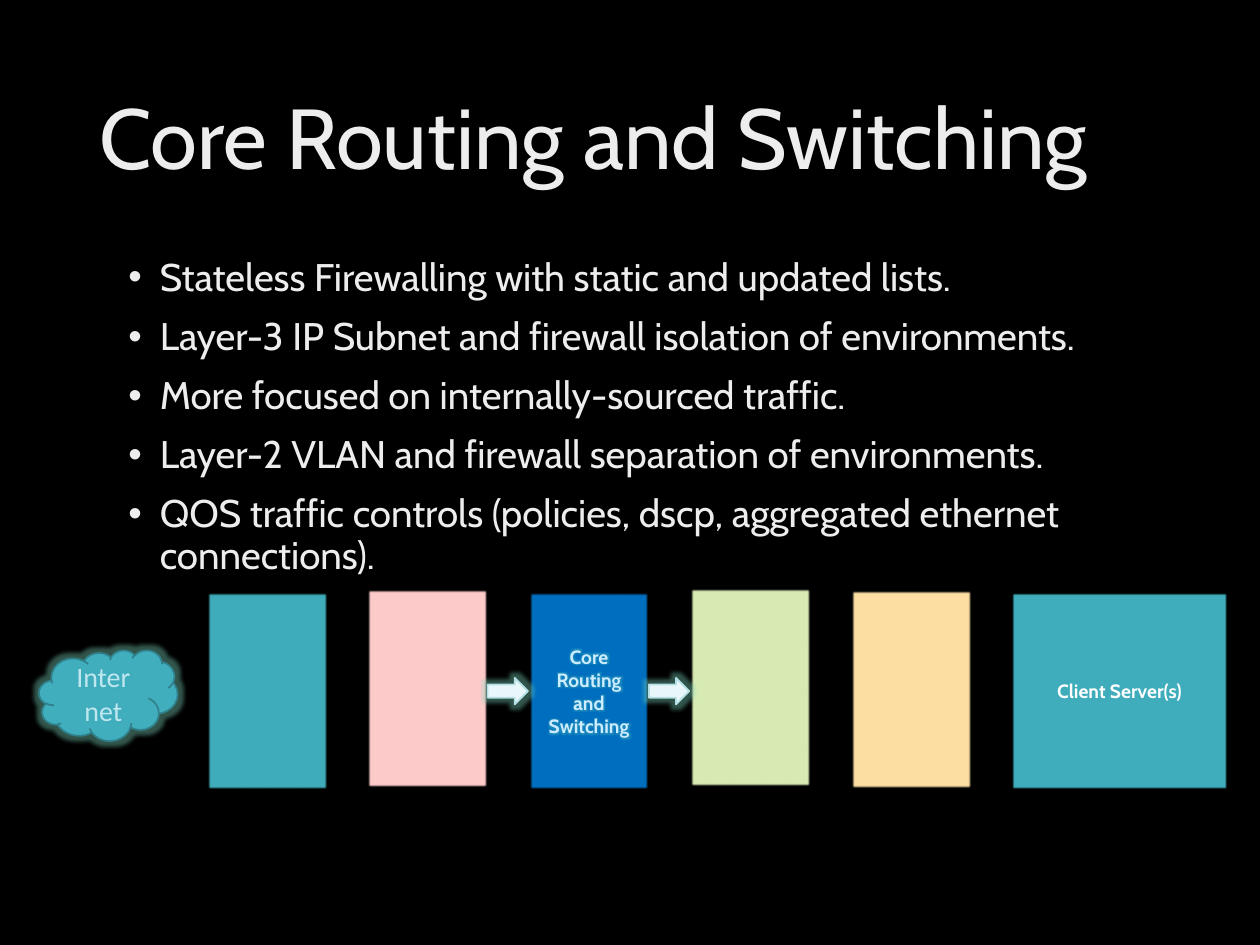
"""Build the Core Routing and Switching slide."""
from lxml import etree
from pptx import Presentation
from pptx.dml.color import RGBColor
from pptx.enum.shapes import MSO_SHAPE
from pptx.enum.text import MSO_ANCHOR, MSO_AUTO_SIZE, PP_ALIGN
from pptx.oxml import parse_xml
from pptx.oxml.ns import qn
from pptx.util import Pt

PX = 9144
RECTANGLE, CLOUD, ARROW = MSO_SHAPE.RECTANGLE, MSO_SHAPE.CLOUD, MSO_SHAPE.RIGHT_ARROW
MIDDLE, TOP = MSO_ANCHOR.MIDDLE, MSO_ANCHOR.TOP
LEFT, CENTER = PP_ALIGN.LEFT, PP_ALIGN.CENTER
NAMESPACE = "http://schemas.openxmlformats.org/drawingml/2006/main"
SOFT_EDGE = f'<a:effectLst xmlns:a="{NAMESPACE}"><a:softEdge rad="12700"/></a:effectLst>'
GLOW = (f'<a:effectLst xmlns:a="{NAMESPACE}"><a:glow rad="63500">'
        '<a:srgbClr val="{}"><a:alpha val="40000"/></a:srgbClr></a:glow></a:effectLst>')


def color(value):
    return RGBColor.from_string(value)


def write_paragraph(paragraph, text, alignment, font_format, font_color):
    paragraph.alignment = alignment
    run = paragraph.add_run()
    run.text = text
    for name, value in font_format.items():
        setattr(run.font, name, value)
    run.font.color.rgb = color(font_color)
    return run


presentation = Presentation()
presentation.slide_width, presentation.slide_height = 1000 * PX, 750 * PX
slide = presentation.slides.add_slide(presentation.slide_layouts[5])
slide.background.fill.solid()
slide.background.fill.fore_color.rgb = color("000000")

title = slide.shapes.title
title.left, title.top, title.width, title.height = 69 * PX, 40 * PX, 862 * PX, 145 * PX
title_frame = title.text_frame
frame_format = {"word_wrap": True, "auto_size": MSO_AUTO_SIZE.NONE, "vertical_anchor": MIDDLE}
for name, value in frame_format.items():
    setattr(title_frame, name, value)
title_paragraph = title_frame.paragraphs[0]
title_paragraph.line_spacing = 0.9
title_format = {"name": "Cabin", "size": Pt(48.6)}
write_paragraph(title_paragraph, "Core Routing and Switching", LEFT, title_format, "EDEDED")

bullets = [
    "Stateless Firewalling with static and updated lists.",
    "Layer-3 IP Subnet and firewall isolation of environments.",
    "More focused on internally-sourced traffic.",
    "Layer-2 VLAN and firewall separation of environments.",
    "QOS traffic controls (policies, dscp, aggregated ethernet connections).",
]
body = slide.shapes.add_textbox(92 * PX, 200 * PX, 839 * PX, 476 * PX)
body_frame = body.text_frame
for name, value in {**frame_format, "vertical_anchor": TOP}.items():
    setattr(body_frame, name, value)
for index, text in enumerate(bullets):
    paragraph = body_frame.add_paragraph() if index else body_frame.paragraphs[0]
    paragraph.line_spacing = 0.9
    paragraph.space_before = Pt(10 if index else 0)
    properties = paragraph._p.get_or_add_pPr()
    properties.set("marL", str(25 * PX))
    properties.set("indent", str(-25 * PX))
    etree.SubElement(properties, qn("a:buFont"), typeface="Arial")
    etree.SubElement(properties, qn("a:buChar"), char="•")
    write_paragraph(paragraph, text, LEFT, {"name": "Cabin", "size": Pt(22)}, "EDEDED")

label_format = {"name": "Cabin", "size": Pt(11), "bold": True}
cloud_format = {"name": "Calibri", "size": Pt(16)}
stages = [
    (165, 470, 95, "41AEBD", "", ""),
    (292, 468, 95, "FFCCCC", "", ""),
    (420, 470, 95, "0070C0", "Core Routing and Switching", "CCECFF"),
    (548, 467, 95, "DAECB6", "", ""),
    (676, 469, 95, "FEE0A4", "", ""),
    (803, 470, 171, "41AEBD", "Client Server(s)", "FFFFFF"),
]
diagram = [(CLOUD, 31, 516, 110, 72, "41AEBD", "30818C", "Internet", "BFE7EF", cloud_format)]
for left, top, width, fill, text, text_color in stages:
    diagram.append((RECTANGLE, left, top, width, 157, fill, None, text, text_color, label_format))
for left in (387, 515):
    diagram.append((ARROW, left, 538, 32, 21, "EAF7FA", "B3DFE5", "", "", label_format))

for kind, left, top, width, height, fill, line, text, text_color, font_format in diagram:
    shape = slide.shapes.add_shape(kind, left * PX, top * PX, width * PX, height * PX)
    shape.fill.solid()
    shape.fill.fore_color.rgb = color(fill)
    if line:
        shape.line.color.rgb = color(line)
        shape.line.width = Pt(1)
    else:
        shape.line.fill.background()
    shape._element.spPr.append(parse_xml(GLOW.format("7FD8C0") if line else SOFT_EDGE))
    if text:
        shape.text_frame.word_wrap = True
        shape.text_frame.vertical_anchor = MIDDLE
        run = write_paragraph(shape.text_frame.paragraphs[0], text, CENTER, font_format, text_color)
        text_fill = run._r.get_or_add_rPr().find(qn("a:solidFill"))
        text_fill.addnext(parse_xml(GLOW.format("41AEBD")))

presentation.save("out.pptx")
